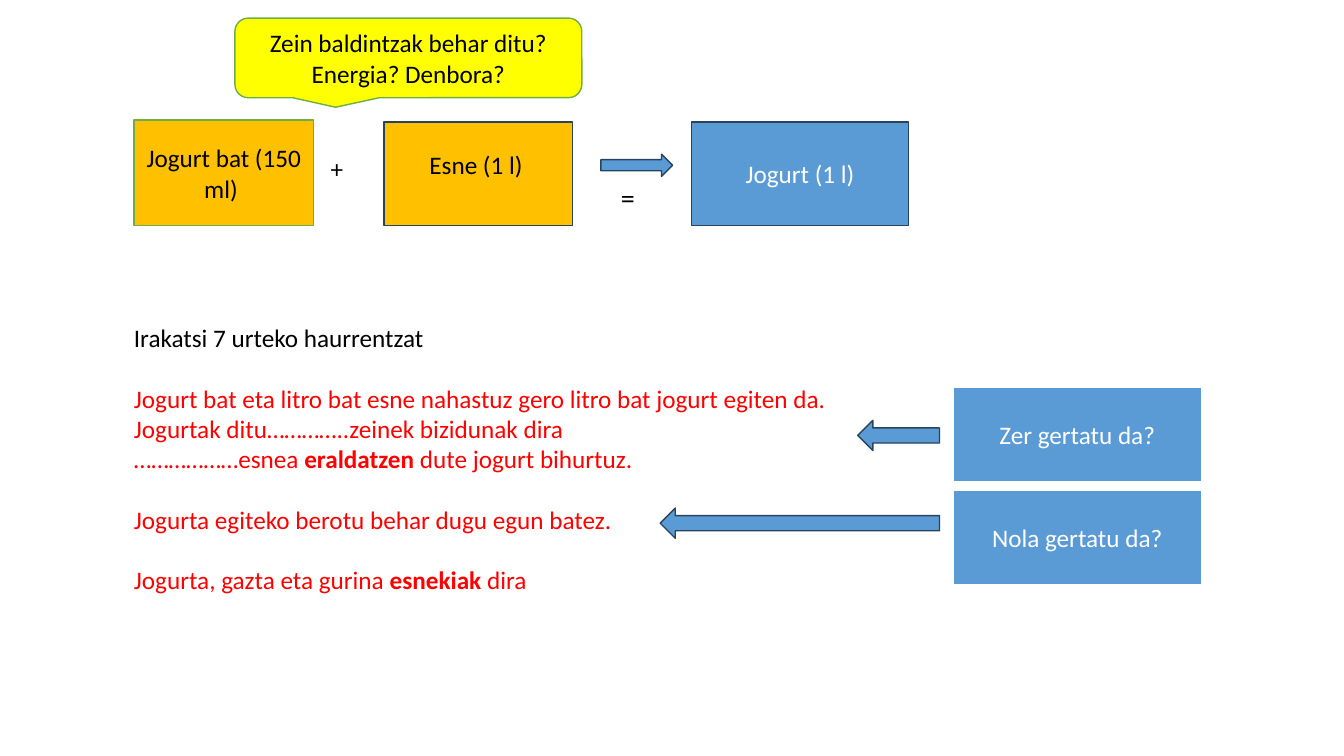
from pptx import Presentation
from pptx.dml.color import RGBColor
from pptx.enum.shapes import MSO_SHAPE
from pptx.enum.text import MSO_ANCHOR, PP_ALIGN
from pptx.util import Inches, Pt

WIDE, HIGH = Inches(13.33), Inches(7.5)
BLACK, WHITE, RED = "000000", "FFFFFF", "FF0000"
BLUE, NAVY, GREEN = "5B9BD5", "28445D", "70AD47"
GOLD, YELLOW = "FFC000", "FFFF00"


def color(code):
    """Turn a hex string into a colour."""
    return RGBColor.from_string(code)


def place(left, top, width, height):
    """Turn percentages of the slide into lengths."""
    return [int(size * part / 100) for size, part in
            zip((WIDE, HIGH, WIDE, HIGH), (left, top, width, height))]


def add_run(para, text, ink, size=18, bold=False):
    """Add one run of text to a paragraph."""
    run = para.add_run()
    run.text = text
    run.font.name = "Calibri"
    run.font.size = Pt(size)
    run.font.bold = bold
    run.font.color.rgb = color(ink)


def add_form(slide, kind, area, fill, edge, weight=1):
    """Draw a filled and outlined preset shape."""
    form = slide.shapes.add_shape(kind, *place(*area))
    form.shadow.inherit = False
    form.fill.solid()
    form.fill.fore_color.rgb = color(fill)
    form.line.color.rgb = color(edge)
    form.line.width = Pt(weight)
    return form


def add_label(form, text, ink):
    """Centre a text inside a shape."""
    frame = form.text_frame
    frame.word_wrap = True
    frame.vertical_anchor = MSO_ANCHOR.MIDDLE
    para = frame.paragraphs[0]
    para.alignment = PP_ALIGN.CENTER
    add_run(para, text, ink)


def add_note(slide, area, lines, size=18):
    """Write lines of (gap, ink, parts); odd parts are bold."""
    frame = slide.shapes.add_textbox(*place(*area)).text_frame
    frame.word_wrap = True
    for row, (gap, ink, parts) in enumerate(lines):
        para = frame.add_paragraph() if row else frame.paragraphs[0]
        para.space_before = Pt(gap)
        for spot, text in enumerate(parts):
            add_run(para, text, ink, size, spot % 2 == 1)


def add_recipe(slide):
    """Draw the yogurt equation and its callout."""
    box = MSO_SHAPE.RECTANGLE
    start = add_form(slide, box, (9.98, 15.87, 13.35, 14), GOLD, GREEN)
    add_label(start, "Jogurt bat (150 ml) ", BLACK)
    add_form(slide, box, (28.58, 16.13, 14.03, 13.73), GOLD, NAVY)
    result = add_form(slide, box, (51.46, 16.13, 16.13, 13.73), BLUE, NAVY)
    add_label(result, "Jogurt (1 l)", WHITE)
    add_form(slide, MSO_SHAPE.RIGHT_ARROW, (44.71, 20.4, 5.33, 2.93), BLUE, NAVY)
    callout = add_form(slide, MSO_SHAPE.ROUNDED_RECTANGULAR_CALLOUT,
                       (17.48, 2.4, 25.81, 10.53), YELLOW, GREEN)
    callout.adjustments[0] = -0.21
    callout.adjustments[1] = 0.62
    add_label(callout, "Zein baldintzak behar ditu? Energia? Denbora?", BLACK)
    for area, text, size in (((23.86, 19.6, 2.5, 5.33), "+", 18),
                             ((45.46, 23.2, 2.55, 5.87), "=", 20),
                             ((31.21, 19.07, 9, 5.33), "Esne (1 l)", 18)):
        add_note(slide, area, [(0, BLACK, [text])], size)


def add_lesson(slide):
    """Write the explanation for the children."""
    gap = 21.6
    add_note(slide, (9.23, 42, 53.64, 41.73), [
        (0, BLACK, ["Irakatsi 7 urteko haurrentzat"]),
        (gap, RED, ["Jogurt bat eta litro bat esne nahastuz gero litro bat jogurt egiten da."]),
        (0, RED, ["Jogurtak ditu…………..zeinek bizidunak dira"]),
        (0, RED, ["………………esnea ", "eraldatzen", " dute jogurt bihurtuz."]),
        (gap, RED, ["Jogurta egiteko berotu behar dugu egun batez."]),
        (gap, RED, ["Jogurta, gazta eta gurina ", "esnekiak", " dira"]),
    ])


def add_prompts(slide):
    """Draw the questions with arrows to the lesson."""
    prompts = (("Zer gertatu da?", 6.08), ("Nola gertatu da?", 20.78))
    for row, (text, reach) in enumerate(prompts):
        card = add_form(slide, MSO_SHAPE.RECTANGLE,
                        (70.89, 51.2 + 13.6 * row, 18.53, 12.53), BLUE, WHITE, 1.5)
        add_label(card, text, WHITE)
        arrow = add_form(slide, MSO_SHAPE.RIGHT_ARROW,
                         (69.9 - reach, 55.6 + 11.6 * row, reach, 4), BLUE, NAVY)
        arrow.rotation = 180


def main():
    """Build and save the slide."""
    deck = Presentation()
    deck.slide_width, deck.slide_height = WIDE, HIGH
    slide = deck.slides.add_slide(deck.slide_layouts[6])
    add_recipe(slide)
    add_lesson(slide)
    add_prompts(slide)
    deck.save("out.pptx")


if __name__ == "__main__":
    main()
